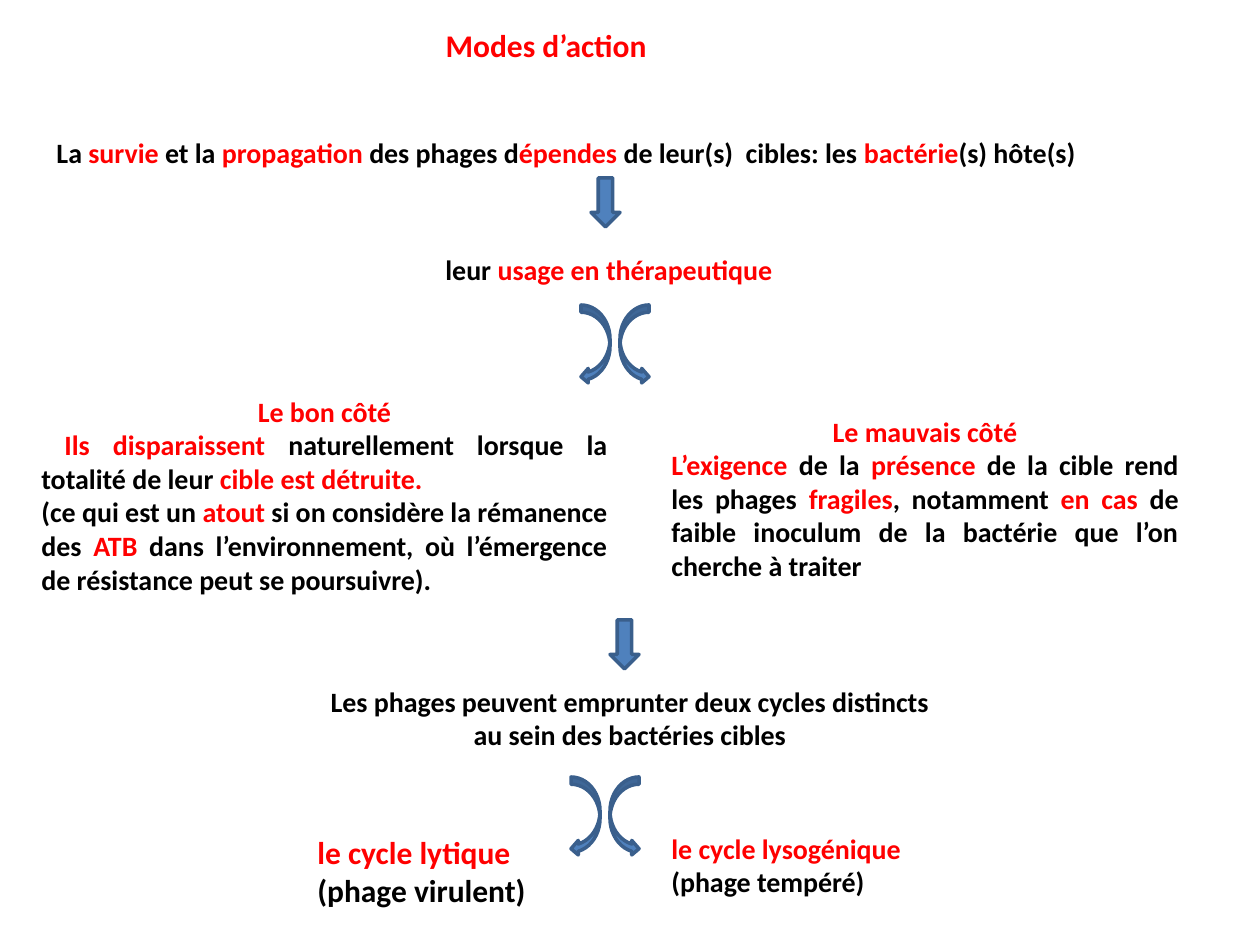
from pptx import Presentation
from pptx.dml.color import RGBColor
from pptx.enum.shapes import MSO_SHAPE
from pptx.enum.text import MSO_ANCHOR, MSO_AUTO_SIZE, PP_ALIGN
from pptx.util import Pt

PX = 914400 / 126  # EMU per pixel
RED = RGBColor(0xFF, 0x00, 0x00)
BLACK = RGBColor(0x00, 0x00, 0x00)
BLUE = RGBColor(0x4F, 0x81, 0xBD)
DARK_BLUE = RGBColor(0x3A, 0x5F, 0x8C)

LEFT, CENTER, JUSTIFY = PP_ALIGN.LEFT, PP_ALIGN.CENTER, PP_ALIGN.JUSTIFY
ARROW_WIDTH = 29


def emu(*lengths):
    return [round(length * PX) for length in lengths]


def write(frame, lines, size=16, wrap=True):
    """Fill a frame with (alignment, text) lines; *stars* enclose red words."""
    frame.word_wrap = wrap
    frame.auto_size = MSO_AUTO_SIZE.SHAPE_TO_FIT_TEXT
    frame.vertical_anchor = MSO_ANCHOR.TOP
    for index, (alignment, text) in enumerate(lines):
        paragraph = frame.add_paragraph() if index else frame.paragraphs[0]
        paragraph.alignment = alignment
        for part, words in enumerate(text.split("*")):
            if not words:
                continue
            run = paragraph.add_run()
            run.text = words
            run.font.name = "Calibri"
            run.font.size = Pt(size)
            run.font.bold = True
            run.font.color.rgb = RED if part % 2 else BLACK


def add_text(slide, box, lines, size=16, wrap=True):
    write(slide.shapes.add_textbox(*emu(*box)).text_frame, lines, size, wrap)


def add_arrow(slide, kind, left, top, height):
    arrow = slide.shapes.add_shape(kind, *emu(left, top, ARROW_WIDTH, height))
    arrow.shadow.inherit = False
    arrow.fill.solid()
    arrow.fill.fore_color.rgb = BLUE
    arrow.line.color.rgb = DARK_BLUE
    arrow.line.width = Pt(2)


def add_down_arrow(slide, left, top):
    add_arrow(slide, MSO_SHAPE.DOWN_ARROW, left, top, 49)


def add_fork(slide, left, top):
    """Two curved arrows standing back to back."""
    add_arrow(slide, MSO_SHAPE.CURVED_RIGHT_ARROW, left + 39, top, 79)
    add_arrow(slide, MSO_SHAPE.CURVED_LEFT_ARROW, left, top, 79)


def add_title(slide, box):
    title = slide.shapes.title
    title.left, title.top, title.width, title.height = emu(*box)
    write(title.text_frame, [(LEFT, "*Modes d’action*")], 18, wrap=False)


def add_survival(slide, left, top):
    add_text(slide, (left, top, 1074, 47), [
        (CENTER, "La *survie* et la *propagation* des phages d*épendes* de "
                 "leur(s)  cibles: les *bactérie*(s) hôte(s)")])
    add_down_arrow(slide, left + 562, top + 49)


def add_therapy(slide, left, top):
    add_text(slide, (left, top, 357, 47),
             [(LEFT, "leur *usage en thérapeutique*")], wrap=False)
    add_fork(slide, left + 148, top + 59)


def add_sides(slide, left, top):
    add_text(slide, (left, top, 591, 217), [
        (CENTER, "*Le bon côté*"),
        (JUSTIFY, "* Ils disparaissent* naturellement lorsque la totalité de "
                  "leur *cible est détruite. *"),
        (JUSTIFY, "(ce qui est un *atout* si on considère la rémanence des "
                  "*ATB* dans l’environnement, où l’émergence de résistance "
                  "peut se poursuivre)."),
    ])
    add_text(slide, (left + 630, top + 20, 532, 183), [
        (CENTER, "*Le mauvais côté*"),
        (JUSTIFY, "*L’exigence *de la *présence* de la cible rend les phages "
                  "*fragiles*, notamment *en cas *de faible inoculum de la "
                  "bactérie que l’on cherche à traiter"),
    ])
    add_down_arrow(slide, left + 581, top + 232)


def add_cycles(slide, left, top):
    add_text(slide, (left, top, 630, 81), [
        (CENTER, "Les phages peuvent emprunter deux cycles distincts "
                 "au sein des bactéries cibles")])
    add_fork(slide, left + 256, top + 99)
    add_text(slide, (left - 10, top + 149, 246, 89),
             [(LEFT, "*le cycle lytique*"), (LEFT, "(phage virulent)")], 18)
    add_text(slide, (left + 344, top + 147, 265, 81),
             [(LEFT, "*le cycle lysogénique*"), (LEFT, "(phage tempéré)")],
             wrap=False)


def main():
    deck = Presentation()
    deck.slide_width, deck.slide_height = emu(1260, 945)
    slide = deck.slides.add_slide(deck.slide_layouts[5])
    add_title(slide, (433, 20, 228, 50))
    add_survival(slide, 29, 129)
    add_therapy(slide, 433, 246)
    add_sides(slide, 29, 388)
    add_cycles(slide, 315, 678)
    deck.save("out.pptx")


if __name__ == "__main__":
    main()
